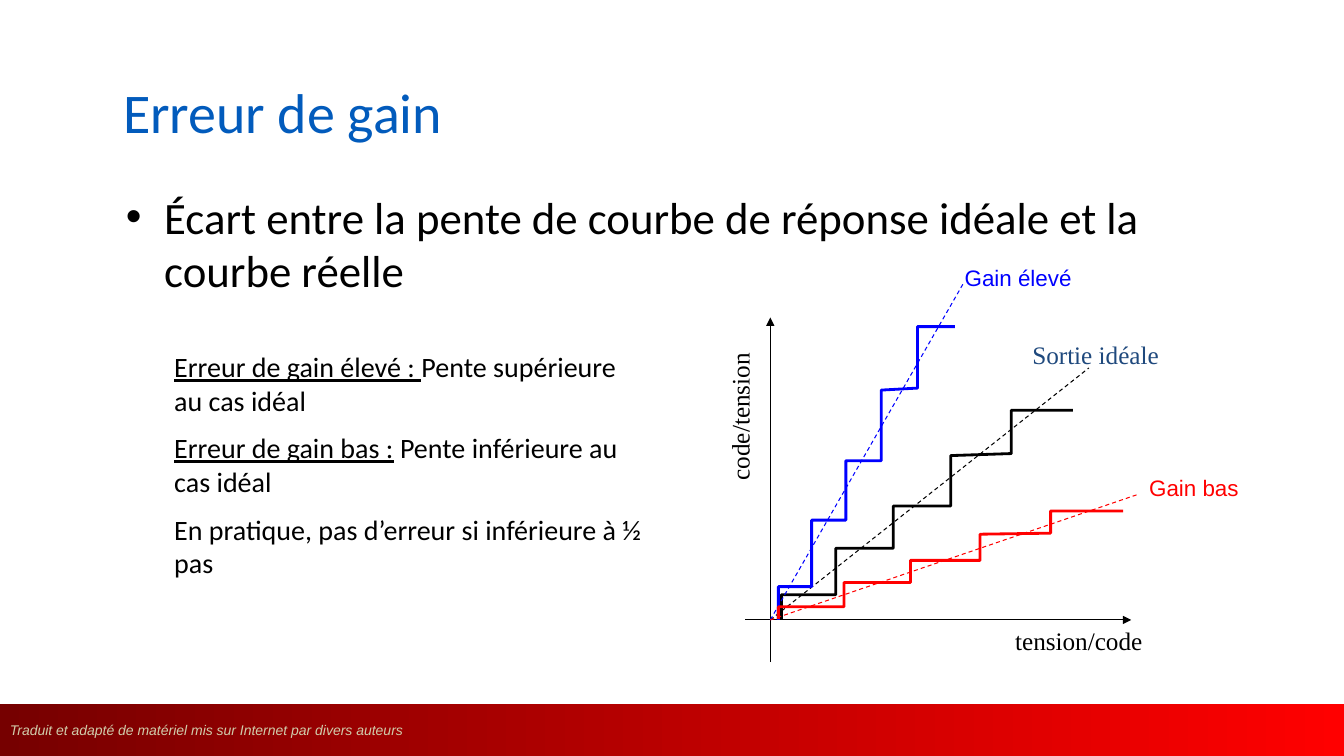
import dataclasses

import pptx
import pptx.dml.color
import pptx.enum.dml
import pptx.enum.shapes
import pptx.enum.text
import pptx.oxml.xmlchemy
import pptx.util

Inches, Pt = pptx.util.Inches, pptx.util.Pt
RGB = pptx.dml.color.RGBColor.from_string
ALIGN, ANCHOR = pptx.enum.text.PP_ALIGN, pptx.enum.text.MSO_ANCHOR
Node = pptx.oxml.xmlchemy.OxmlElement


@dataclasses.dataclass(frozen=True)
class Theme:
    black: str = "000000"
    title: str = "025BBC"
    ideal: str = "1F497D"
    high: str = "0000FF"
    low: str = "FF0000"
    dark: str = "760000"
    foot: str = "D1CCAB"
    sans: str = "Calibri"
    plain: str = "Arial"
    serif: str = "Times New Roman"
    head_size: int = 40
    lead_size: int = 32
    note_size: int = 20
    axis_size: int = 18
    gain_size: int = 16
    foot_size: int = 10


theme = Theme()


def write(frame, text, font, size, color, line=False, slant=False):
    """Add one run to the last paragraph of a frame."""
    run = frame.paragraphs[-1].add_run()
    run.text = text
    run.font.name, run.font.size = font, Pt(size)
    run.font.color.rgb = RGB(color)
    run.font.underline = line
    run.font.italic = slant


def draw(start, end, color, arrow=False):
    """Draw a thin line: solid with an arrow, or dashed without."""
    line = slide.shapes.add_connector(
        pptx.enum.shapes.MSO_CONNECTOR.STRAIGHT,
        *(Inches(v) for v in (*start, *end)))
    line.line.color.rgb = RGB(color)
    line.line.width = Pt(0.75)
    if arrow:
        tip = Node("a:tailEnd")
        tip.set("type", "triangle")
        line._element.spPr.get_or_add_ln().append(tip)
    else:
        line.line.dash_style = pptx.enum.dml.MSO_LINE.DASH
    line._element.spPr.append(Node("a:effectLst"))


deck = pptx.Presentation()
deck.slide_width, deck.slide_height = Inches(13.33), Inches(7.5)
slide = deck.slides.add_slide(deck.slide_layouts[5])

# Footer band
band = slide.shapes.add_shape(
    pptx.enum.shapes.MSO_SHAPE.RECTANGLE,
    Inches(0), Inches(6.98), Inches(13.33), Inches(0.52))
band.shadow.inherit = False
band.line.fill.background()
band.fill.gradient()
band.fill.gradient_angle = 0
for stop, color in zip(band.fill.gradient_stops, (theme.dark, theme.low)):
    stop.color.rgb = RGB(color)
band.text_frame.vertical_anchor = ANCHOR.MIDDLE
band.text_frame.paragraphs[0].alignment = ALIGN.LEFT
write(band.text_frame,
      "Traduit et adapté de matériel mis sur Internet par divers auteurs",
      theme.plain, theme.foot_size, theme.foot, slant=True)

# Title
title = slide.shapes.title
title.left, title.top = Inches(1.12), Inches(0.65)
title.width, title.height = Inches(10.01), Inches(0.9)
title.text_frame.vertical_anchor = ANCHOR.MIDDLE
title.text_frame.paragraphs[0].alignment = ALIGN.LEFT
write(title.text_frame, "Erreur de gain",
      theme.sans, theme.head_size, theme.title)

# Main bullet
lead = slide.shapes.add_textbox(
    Inches(1.15), Inches(1.83), Inches(10.79), Inches(1.17)).text_frame
lead.word_wrap = True
props = lead.paragraphs[0]._p.get_or_add_pPr()
props.set("marL", str(Inches(0.38)))
props.set("indent", str(-Inches(0.38)))
face = Node("a:buFont")
face.set("typeface", theme.plain)
mark = Node("a:buChar")
mark.set("char", "•")
props.extend([face, mark])
write(lead,
      "Écart entre la pente de courbe de réponse idéale et la courbe réelle",
      theme.sans, theme.lead_size, theme.black)

# Notes on the left
notes = slide.shapes.add_textbox(
    Inches(1.63), Inches(3.42), Inches(4.87), Inches(2.46)).text_frame
notes.word_wrap = True
for row, (term, text) in enumerate([
    ("Erreur de gain élevé : ", "Pente supérieure au cas idéal"),
    ("Erreur de gain bas :", " Pente inférieure au cas idéal"),
    ("", "En pratique, pas d’erreur si inférieure à ½ pas"),
]):
    if row:
        notes.add_paragraph().space_before = Pt(theme.note_size / 2)
    if term:
        write(notes, term, theme.sans, theme.note_size, theme.black, line=True)
    write(notes, text, theme.sans, theme.note_size, theme.black)

# Axes
zero = (7.64, 6.15)
draw((zero[0], 6.57), (zero[0], 3.15), theme.black, arrow=True)
draw((7.39, zero[1]), (11.22, zero[1]), theme.black, arrow=True)

# Stairs and their slopes: color, slope end, riser x, tread y, lift of tread 4
for color, end, xs, ys, lift in [
    (theme.black, (10.8, 3.65), (7.75, 8.29, 8.86, 9.43, 10.03, 10.64),
     (6.14, 5.9, 5.44, 5.02, 4.52, 4.07), 0.02),
    (theme.high, (9.55, 2.82), (7.72, 8.05, 8.39, 8.74, 9.1, 9.47),
     (6.15, 5.82, 5.16, 4.57, 3.87, 3.24), 0.02),
    (theme.low, (11.3, 4.9), (7.72, 8.37, 9.03, 9.72, 10.42, 11.14),
     (6.14, 6.02, 5.78, 5.56, 5.3, 5.07), 0.01),
]:
    points = []
    for step in range(1, len(xs)):
        rise = lift if step == 4 else 0
        points += [(xs[step - 1], ys[step]), (xs[step], ys[step] - rise)]
    trace = slide.shapes.build_freeform(Inches(xs[0]), Inches(ys[0]))
    trace.add_line_segments(
        [(Inches(x), Inches(y)) for x, y in points], close=False)
    stairs = trace.convert_to_shape()
    stairs.shadow.inherit = False
    stairs.fill.background()
    stairs.line.color.rgb = RGB(color)
    stairs.line.width = Pt(2)
    draw(zero, end, color)

# Graph labels
for text, spot, font, size, color, turn, align in [
    ("tension/code", (9.97, 6.15, 2, 0.4),
     theme.serif, theme.axis_size, theme.black, 0, ALIGN.LEFT),
    ("Sortie idéale", (10.14, 3.32, 2.5, 0.4),
     theme.serif, theme.axis_size, theme.ideal, 0, ALIGN.LEFT),
    ("code/tension", (5.96, 4.58, 2.75, 0.4),
     theme.serif, theme.axis_size, theme.black, 270, ALIGN.RIGHT),
    ("Gain bas", (11.3, 4.65, 1.33, 0.37),
     theme.plain, theme.gain_size, theme.low, 0, ALIGN.LEFT),
    ("Gain élevé", (9.47, 2.57, 1.33, 0.37),
     theme.plain, theme.gain_size, theme.high, 0, ALIGN.LEFT),
]:
    label = slide.shapes.add_textbox(*(Inches(v) for v in spot))
    label.rotation = turn
    label.text_frame.word_wrap = True
    label.text_frame.paragraphs[0].alignment = align
    write(label.text_frame, text, font, size, color)

deck.save("out.pptx")
